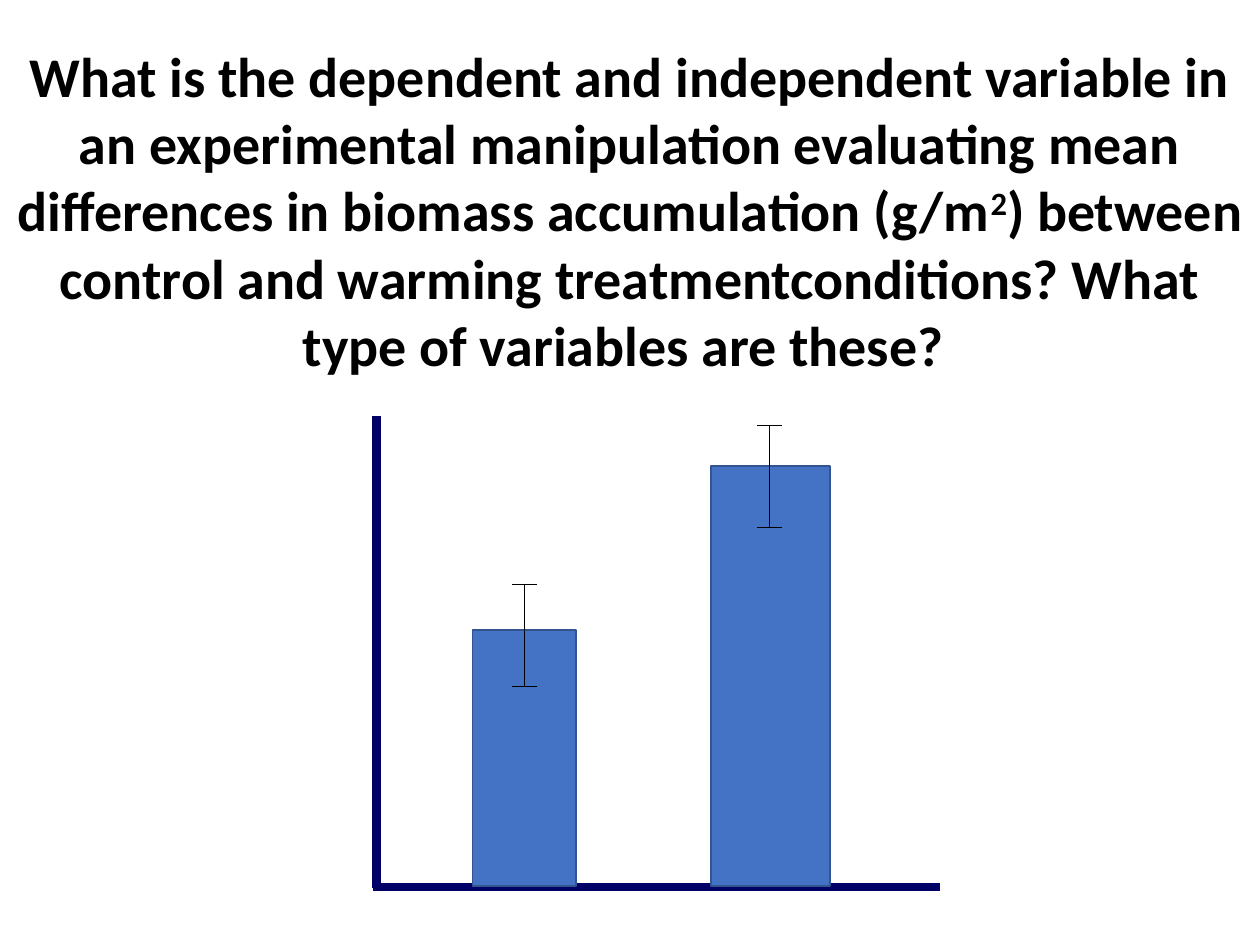
from dataclasses import dataclass

from lxml.etree import SubElement
from pptx import Presentation
from pptx.dml.color import RGBColor
from pptx.enum.shapes import MSO_CONNECTOR as Connector, MSO_SHAPE as Shape
from pptx.enum.text import MSO_AUTO_SIZE as AutoSize, PP_ALIGN as Align
from pptx.oxml.ns import qn
from pptx.util import Inches, Pt

# Positions are in columns and rows of a 100 x 75 grid of square cells.
COLUMNS, ROWS = 100, 75
CELL = Inches(10) // COLUMNS
BLACK, NAVY, BLUE, DARK_BLUE = "000000", "000066", "4472C4", "325491"
BASELINE = 70.3
CAP_WIDTH = 2


@dataclass(frozen=True)
class Bar:
    """A mean with its error bar."""
    left: float
    width: float
    top: float
    error_center: float
    error_top: float
    error_bottom: float


BARS = [
    Bar(left=37.5, width=8.2, top=50, error_center=41.6, error_top=46.4, error_bottom=54.5),
    Bar(left=56.4, width=9.5, top=37, error_center=61.1, error_top=33.8, error_bottom=41.9),
]
AXES = [((29.9, 33), (29.9, 70.5)), ((29.6, 70.4), (74.6, 70.4))]
QUESTION = [
    ("What is the dependent and independent variable in an experimental manipulation "
     "evaluating mean differences in biomass accumulation (g/m", False),
    ("2", True),
    (") between control and warming treatmentconditions? What type of variables are these? ",
     False),
]


def grid(cells: float) -> int:
    return round(cells * CELL)


def color(value: str) -> RGBColor:
    return RGBColor.from_string(value)


def add_text(slide, runs, left: float, top: float, width: float, height: float, *,
             size: float, font: str = "Calibri", fill: str = BLACK,
             bold: bool = False, align=Align.CENTER) -> None:
    """Add one paragraph from (text, is_superscript) pairs."""
    box = slide.shapes.add_textbox(*map(grid, (left, top, width, height)))
    frame = box.text_frame
    frame.word_wrap = True
    frame.auto_size = AutoSize.SHAPE_TO_FIT_TEXT
    paragraph = frame.paragraphs[0]
    paragraph.alignment = align
    for text, is_superscript in runs:
        run = paragraph.add_run()
        run.text = text
        run.font.name, run.font.size, run.font.bold = font, Pt(size), bold
        run.font.color.rgb = color(fill)
        if is_superscript:
            run._r.get_or_add_rPr().set("baseline", "30000")


def add_line(shapes, start: tuple[float, float], end: tuple[float, float],
             stroke: str, weight: float) -> None:
    line = shapes.add_connector(Connector.STRAIGHT, *map(grid, (*start, *end)))
    line.line.color.rgb = color(stroke)
    line.line.width = Pt(weight)
    SubElement(line._element.spPr, qn("a:effectLst"))


def add_bar(slide, bar: Bar) -> None:
    shape = slide.shapes.add_shape(
        Shape.RECTANGLE, *map(grid, (bar.left, bar.top, bar.width, BASELINE - bar.top)))
    shape.shadow.inherit = False
    shape.fill.solid()
    shape.fill.fore_color.rgb = color(BLUE)
    shape.line.color.rgb = color(DARK_BLUE)
    shape.line.width = Pt(1)


def add_error_bar(slide, bar: Bar) -> None:
    center, half = bar.error_center, CAP_WIDTH / 2
    add_line(slide.shapes, (center, bar.error_top), (center, bar.error_bottom), BLACK, 0.5)
    for row in (bar.error_top, bar.error_bottom):
        add_line(slide.shapes, (center - half, row), (center + half, row), BLACK, 0.5)


def main() -> None:
    presentation = Presentation()
    presentation.slide_width, presentation.slide_height = grid(COLUMNS), grid(ROWS)
    slide = presentation.slides.add_slide(presentation.slide_layouts[6])

    add_text(slide, QUESTION, 0, 2.8, COLUMNS, 27.9, size=32, bold=True)
    axes = slide.shapes.add_group_shape()
    for start, end in AXES:
        add_line(axes.shapes, start, end, NAVY, 5)
    for bar in BARS:
        add_bar(slide, bar)
    for bar in BARS:
        add_error_bar(slide, bar)

    presentation.save("out.pptx")


if __name__ == "__main__":
    main()
